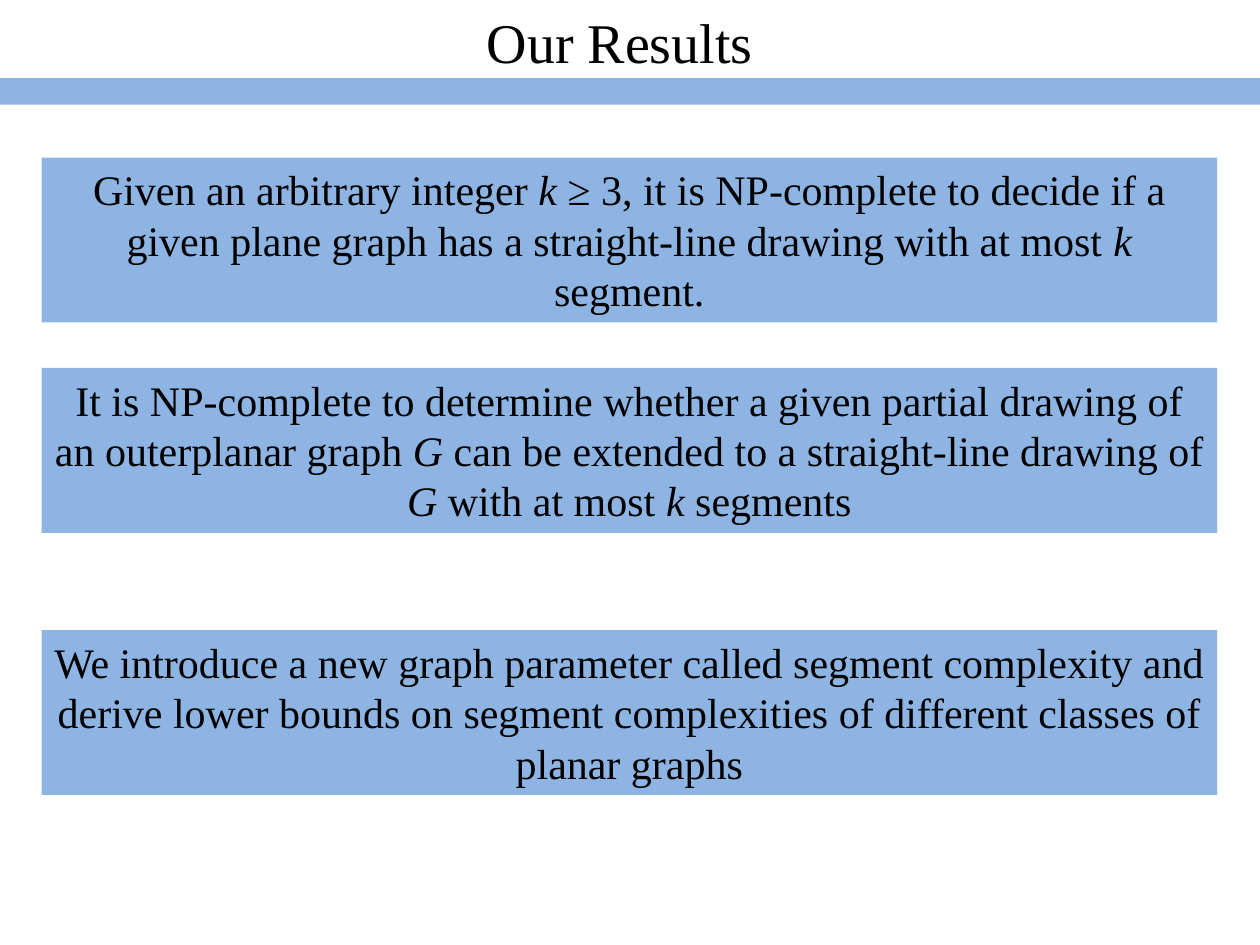
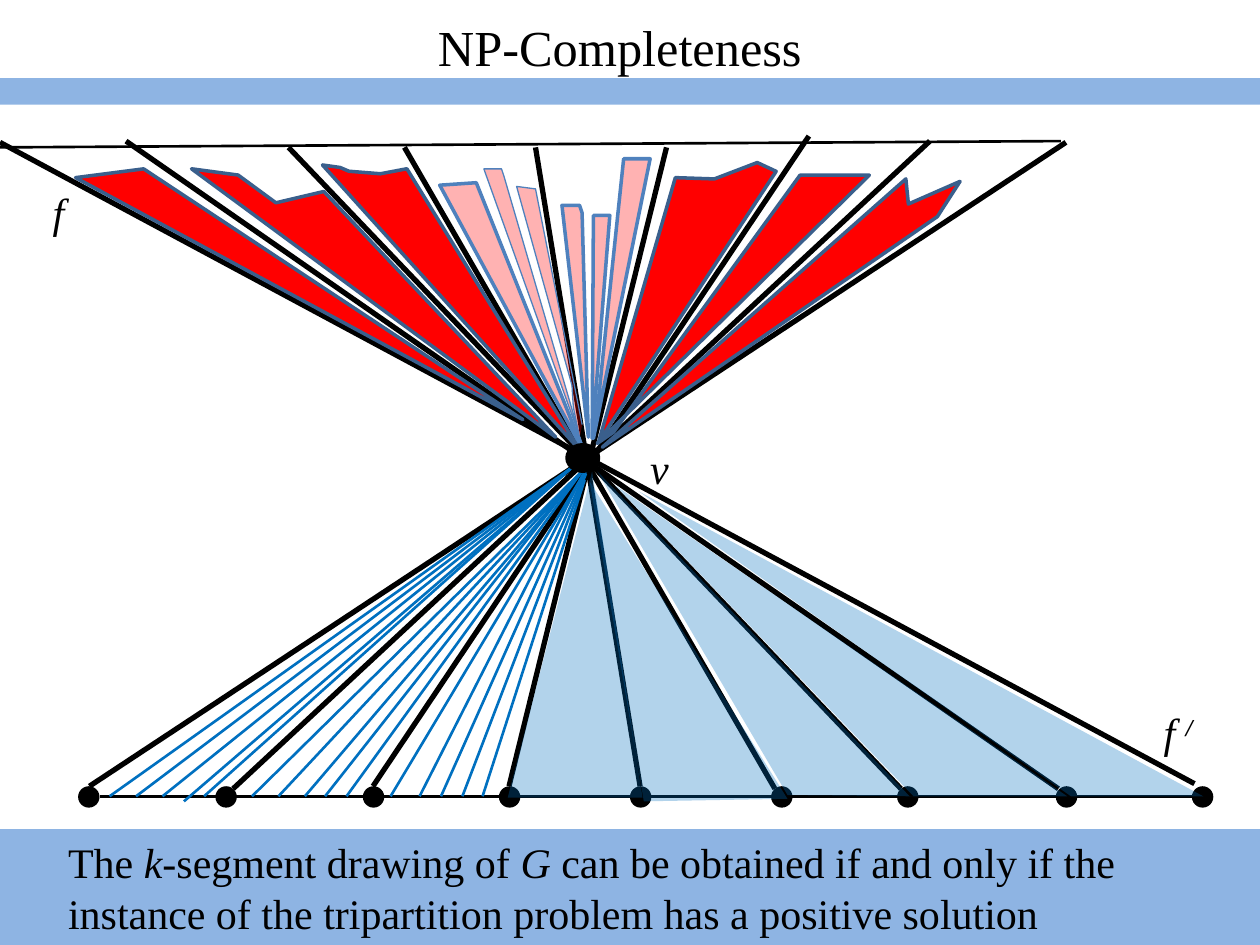
from lxml import etree
from pptx import Presentation
from pptx.dml.color import RGBColor
from pptx.enum.shapes import MSO_CONNECTOR, MSO_SHAPE
from pptx.enum.text import MSO_ANCHOR, MSO_AUTO_SIZE, PP_ALIGN
from pptx.oxml.ns import qn
from pptx.util import Pt

RECT, ROUND, OVAL = MSO_SHAPE.RECTANGLE, MSO_SHAPE.ROUNDED_RECTANGLE, MSO_SHAPE.OVAL
STRAIGHT = MSO_CONNECTOR.STRAIGHT
FIXED = MSO_AUTO_SIZE.NONE
LEFT, CENTER = PP_ALIGN.LEFT, PP_ALIGN.CENTER
TOP, MIDDLE = MSO_ANCHOR.TOP, MSO_ANCHOR.MIDDLE

PX = 9144
WIDE, HIGH = 1000, 750
FONT = "Times New Roman"
HUE = {"ink": "000000", "band": "8EB4E3", "ray": "0070C0", "red": "FF0000",
       "edge": "3A5F8C", "rim": "4F81BD"}

CLAIMS = [
    (125, "Given an arbitrary integer *k* ≥ 3, it is NP-complete to decide if a given "
          "plane graph has a straight-line drawing with at most *k* segment."),
    (292, "It is NP-complete to determine whether a given partial drawing of an outerplanar "
          "graph *G* can be extended to a straight-line drawing of *G* with at most "
          "*k* segments"),
    (500, "We introduce a new graph parameter called segment complexity and derive lower "
          "bounds on segment complexities of different classes of planar graphs"),
]
VERDICT = ("The *k*-segment drawing of *G* can be obtained if and only if the instance "
           "of the tripartition problem has a positive solution")

DOTS = [62, 171, 288, 396, 500, 612, 712, 838, 946]
SPOKES = [
    (71, 624, 846, 113), (948, 622, 0, 113), (185, 626, 738, 112),
    (296, 624, 642, 108), (840, 626, 100, 112), (715, 626, 229, 117),
    (615, 626, 321, 117), (404, 624, 529, 117), (508, 624, 425, 117),
]
BASES = [(842, 112, 0, 117), (946, 632, 79, 632)]
RAYS = [
    (454, 371, 87), (454, 371, 108), (454, 371, 129), (454, 371, 146), (454, 371, 162),
    (462, 374, 200), (462, 374, 221), (462, 374, 242), (458, 378, 258), (462, 374, 275),
    (467, 370, 310), (463, 376, 333), (467, 370, 350), (465, 376, 367), (464, 381, 383),
]
BENT = {146: 636}
FANS = [
    [(470, 374), (403, 633), (510, 633)],
    [(468, 382), (511, 636), (625, 634)],
    [(474, 374), (625, 631), (725, 632), (722, 632)],
    [(488, 385), (725, 632), (847, 632)],
    [(507, 390), (955, 632), (949, 632), (850, 632)],
]
PALE = [
    (2, True, [(464, 360), (349, 147), (378, 145)]),
    (0.75, False, [(462, 352), (384, 134), (398, 134), (400, 140), (459, 342)]),
    (0.75, False, [(460, 348), (455, 323), (454, 306), (410, 148), (425, 150), (462, 337)]),
    (2, True, [(467, 347), (446, 163), (460, 163), (462, 169)]),
    (2, True, [(471, 348), (473, 336), (495, 126), (516, 126)]),
    (2, True, [(470, 348), (471, 171), (484, 171)]),
]
FULL = [
    [(475, 351), (536, 141), (567, 142), (601, 129), (616, 136)],
    [(460, 357), (323, 134), (302, 138), (277, 136), (270, 133), (256, 131)],
    [(474, 352), (487, 343), (492, 336), (635, 139), (690, 139), (482, 344)],
    [(478, 355), (719, 142), (721, 162), (762, 144), (744, 172)],
    [(441, 347), (152, 134), (189, 139), (219, 161), (257, 152)],
    [(415, 333), (60, 141), (114, 134)],
]
LABELS = [(13, 143, "*f*"), (904, 556, "*f *"), (490, 346, "*v*")]


def rgb(name):
    return RGBColor.from_string(HUE[name])


def paint(shape, fill=None, line=None, thick=1, clear=None):
    shape.shadow.inherit = False
    if fill:
        shape.fill.solid()
        shape.fill.fore_color.rgb = rgb(fill)
    else:
        shape.fill.background()
    if clear:
        tint = shape._element.spPr.find(qn("a:solidFill"))[0]
        etree.SubElement(tint, qn("a:alpha")).set("val", str(clear * 1000))
    if line:
        shape.line.color.rgb = rgb(line)
        shape.line.width = Pt(thick)
    else:
        shape.line.fill.background()


def add_run(para, text, size, slant=False):
    run = para.add_run()
    run.text = text
    font = run.font
    font.name, font.size, font.italic = FONT, Pt(size), slant
    font.color.rgb = rgb("ink")
    return run


def write(shape, text, size=24, align=CENTER, anchor=MIDDLE):
    frame = shape.text_frame
    frame.word_wrap = True
    frame.auto_size = FIXED
    frame.vertical_anchor = anchor
    para = frame.paragraphs[0]
    para.alignment = align
    for i, part in enumerate(text.split("*")):
        if part:
            add_run(para, part, size, i % 2 == 1)
    return para


def add_box(slide, kind, left, top, width, height, **look):
    box = slide.shapes.add_shape(kind, left * PX, top * PX, width * PX, height * PX)
    paint(box, **look)
    return box


def add_line(slide, x1, y1, x2, y2, hue, thick):
    line = slide.shapes.add_connector(STRAIGHT, x1 * PX, y1 * PX, x2 * PX, y2 * PX)
    line.line.color.rgb = rgb(hue)
    line.line.width = Pt(thick)
    etree.SubElement(line._element.spPr, qn("a:effectLst"))


def add_wedge(slide, points, close=True, **look):
    pen = slide.shapes.build_freeform(*points[0], scale=PX)
    pen.add_line_segments(points[1:], close=close)
    paint(pen.convert_to_shape(), **look)


def add_slide(deck, title, size, top):
    slide = deck.slides.add_slide(deck.slide_layouts[5])
    head = slide.shapes.title
    head.left, head.top, head.width, head.height = 42 * PX, top * PX, 900 * PX, 50 * PX
    write(head, title, size)
    add_box(slide, RECT, 0, 62, WIDE, 21, fill="band")
    return slide


def draw_claims(slide):
    for top, text in CLAIMS:
        box = add_box(slide, RECT, 33, top, 933, 131, fill="band")
        write(box, text, anchor=TOP)


def draw_lines(slide):
    for left in DOTS:
        add_box(slide, OVAL, left, 624, 17, 17, fill="ink")
    for ends in SPOKES:
        add_line(slide, *ends, "ink", 3)
    for ends in BASES:
        add_line(slide, *ends, "ink", 1.5)
    for x, y, foot in RAYS:
        add_line(slide, x, y, foot, BENT.get(foot, 632), "ray", 1.5)


def draw_wedges(slide):
    for points in FANS:
        add_wedge(slide, points, fill="ray", clear=30)
    for thick, close, points in PALE:
        add_wedge(slide, points, close, fill="red", clear=30, line="rim", thick=thick)
    for points in FULL:
        add_wedge(slide, points, fill="red", line="edge", thick=2)


def draw_text(slide):
    base = add_box(slide, RECT, 0, 658, WIDE, 92, fill="band")
    write(base, VERDICT, align=LEFT)
    base.text_frame.margin_left = 54 * PX
    for left, top, text in LABELS:
        para = write(add_box(slide, ROUND, left, top, 67, 50), text)
        if text == "*f *":
            prime = add_run(para, "/ ", 24, True)
            prime.font.bold = True
            prime._r.get_or_add_rPr().set("baseline", "30000")


def main():
    deck = Presentation()
    deck.slide_width, deck.slide_height = WIDE * PX, HIGH * PX
    draw_claims(add_slide(deck, "Our Results", 32, 8))
    proof = add_slide(deck, "NP-Completeness", 28.8, 12)
    draw_lines(proof)
    draw_wedges(proof)
    draw_text(proof)
    add_box(proof, OVAL, 450, 353, 25, 21, fill="ink", line="ink", thick=2)
    deck.save("out.pptx")


if __name__ == "__main__":
    main()
